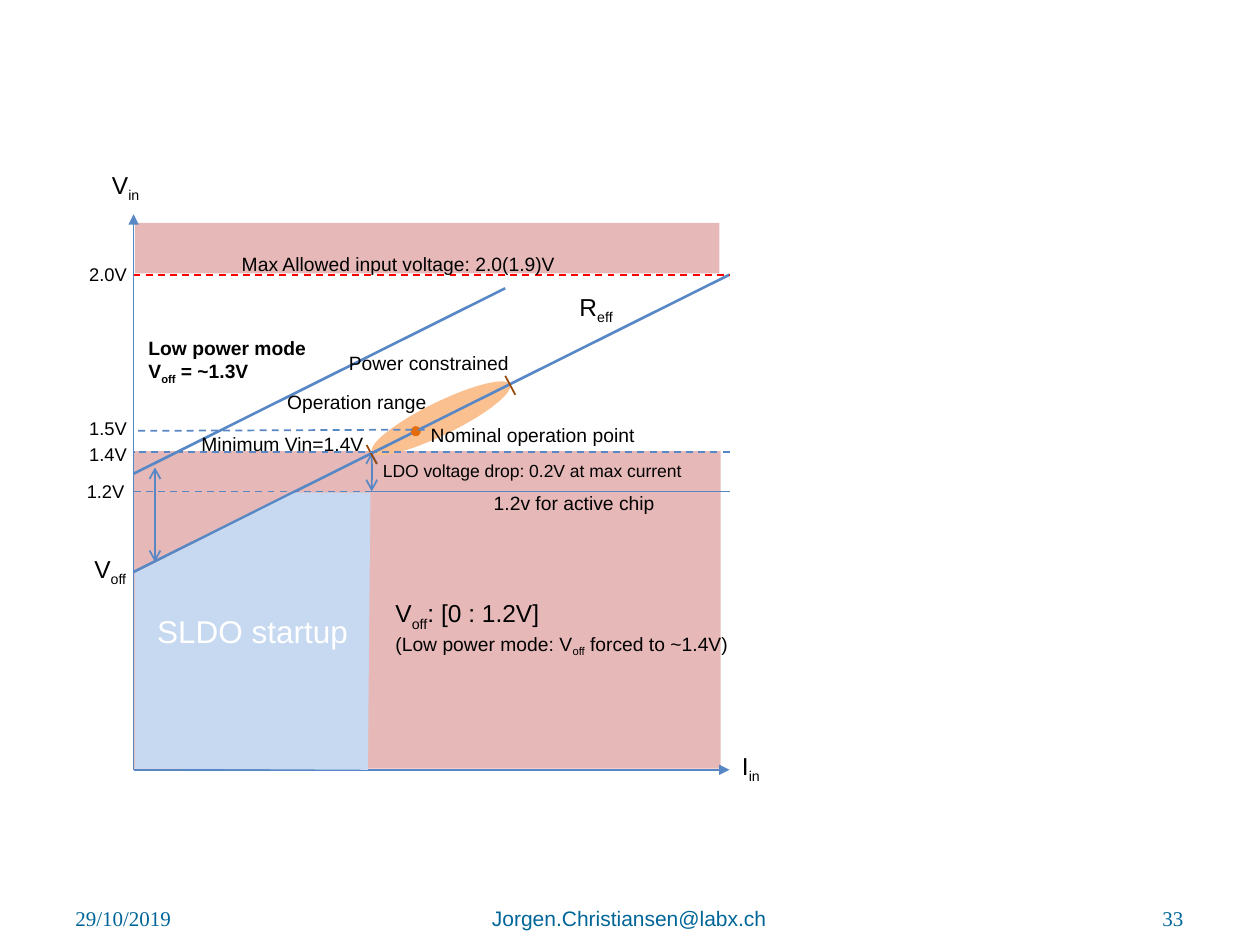
from dataclasses import dataclass

from lxml.etree import SubElement
from pptx import Presentation
from pptx.dml.color import RGBColor
from pptx.enum.dml import MSO_LINE_DASH_STYLE as Dash
from pptx.enum.shapes import MSO_CONNECTOR as Connector, MSO_SHAPE as Shape
from pptx.enum.text import MSO_ANCHOR as Anchor, MSO_AUTO_SIZE as AutoSize, PP_ALIGN as Align
from pptx.oxml.ns import qn
from pptx.util import Inches, Pt

BLACK = RGBColor(0, 0, 0)
WHITE = RGBColor(255, 255, 255)
RED = RGBColor(255, 0, 0)
BLUE = RGBColor(0x58, 0x87, 0xC6)
PALE_BLUE = RGBColor(0xC6, 0xD9, 0xF1)
PINK = RGBColor(0xE6, 0xB9, 0xB8)
PEACH = RGBColor(0xFA, 0xC0, 0x90)
ORANGE = RGBColor(0xE4, 0x6C, 0x0A)
BROWN = RGBColor(0x98, 0x48, 0x07)
TEAL = RGBColor(0, 0x66, 0x99)

CELL = Inches(10) // 100
COLUMNS, ROWS = 100, 75


@dataclass
class Box:
    left: float
    top: float
    width: float
    height: float

    def at(self, column, row):
        return round((self.left + column) * CELL), round((self.top + row) * CELL)

    def area(self, column, row, width, height):
        return *self.at(column, row), round(width * CELL), round(height * CELL)


def write(paragraph, marked, size, color=BLACK, font="Arial", bold=False):
    for index, part in enumerate(marked.split("_")):
        for count, piece in enumerate(part.split("\n")):
            if count:
                paragraph.add_line_break()
            if not piece:
                continue
            run = paragraph.add_run()
            run.text = piece
            run.font.size = Pt(size)
            run.font.name = font
            run.font.bold = bold
            run.font.color.rgb = color
            if index % 2:
                run._r.get_or_add_rPr().set("baseline", "-25000")


def label(slide, box, area, *lines, bold=False):
    frame = slide.shapes.add_textbox(*box.area(*area)).text_frame
    frame.word_wrap = False
    frame.auto_size = AutoSize.SHAPE_TO_FIT_TEXT
    for index, (marked, size) in enumerate(lines):
        paragraph = frame.add_paragraph() if index else frame.paragraphs[0]
        write(paragraph, marked, size, bold=bold)


def paint(shape, color):
    shape.shadow.inherit = False
    shape.fill.solid()
    shape.fill.fore_color.rgb = color
    shape.line.fill.background()
    return shape


def line(slide, box, start, end, color=BLUE, width=1, dashed=False, head=None, tail=None):
    connector = slide.shapes.add_connector(Connector.STRAIGHT, *box.at(*start), *box.at(*end))
    connector.line.color.rgb = color
    connector.line.width = Pt(width)
    if dashed:
        connector.line.dash_style = Dash.DASH
    outline = connector.line._get_or_add_ln()
    for tag, arrow in (("a:headEnd", head), ("a:tailEnd", tail)):
        if arrow:
            SubElement(outline, qn(tag), type=arrow)
    SubElement(connector._element.spPr, qn("a:effectLst"))


def footer(slide, box):
    parts = (
        (5, 0, 23.3, 3.4, "29/10/2019", "Times New Roman", Align.LEFT),
        (34.1, 0.8, 31.7, 2.6, "Jorgen.Christiansen@labx.ch", "Arial", Align.CENTER),
        (71.6, 0.8, 23.3, 2.6, "33", "Times New Roman", Align.RIGHT),
    )
    for *area, words, font, align in parts:
        frame = slide.shapes.add_textbox(*box.area(*area)).text_frame
        frame.word_wrap = True
        frame.vertical_anchor = Anchor.BOTTOM
        frame.paragraphs[0].alignment = align
        write(frame.paragraphs[0], words, 12, TEAL, font)


def voltage_plot(slide, box):
    right, bottom = box.width, box.height
    max_row, nominal_row, minimum_row, chip_row = 4.8, 17.2, 18.9, 22
    offset_row, low_power_row = 28.4, 20.6
    minimum, nominal, limit = 18.9, 22.4, 29.9
    slope = (offset_row - max_row) / right

    def load_row(column, start=offset_row):
        return start - slope * column

    shapes = slide.shapes
    paint(shapes.add_shape(Shape.RECTANGLE, *box.area(0.1, 0.7, 46.4, 4)), PINK)
    paint(shapes.add_shape(Shape.RECTANGLE, *box.area(0, 18.8, 46.6, 25.2)), PINK)
    operation = paint(shapes.add_shape(Shape.OVAL, *box.area(18.3, 14.9, 12.2, 2.6)), PEACH)
    operation.rotation = 333.9

    line(slide, box, (0, bottom), (right, bottom), tail="triangle")
    line(slide, box, (0, offset_row), (right, max_row), width=1.5)
    line(slide, box, (minimum, chip_row), (right, chip_row))
    line(slide, box, (minimum, minimum_row), (minimum, chip_row), head="arrow", tail="arrow")
    line(slide, box, (minimum, chip_row), (0, chip_row), dashed=True)

    outline = shapes.build_freeform(*box.at(18.8, chip_row + 0.1), scale=1.0)
    crossing = (offset_row - chip_row) / slope
    outline.add_line_segments([box.at(*corner) for corner in (
        (18.6, bottom), (0.1, bottom - 0.1), (0.1, offset_row + 0.1),
        (crossing, chip_row + 0.1))])
    startup = paint(outline.convert_to_shape(), PALE_BLUE).text_frame
    startup.vertical_anchor = Anchor.MIDDLE
    startup.paragraphs[0].alignment = Align.CENTER
    write(startup.paragraphs[0], "SLDO startup", 18, WHITE)

    dot = 0.8
    paint(shapes.add_shape(Shape.OVAL, *box.area(
        nominal - dot / 2, load_row(nominal) - dot / 2, dot, dot)), ORANGE)
    for column in (minimum, limit):
        middle = load_row(column) + 0.1
        line(slide, box, (column - 0.4, middle - 0.75), (column + 0.4, middle + 0.75), BROWN)
    line(slide, box, (0, bottom), (0, 0), tail="triangle")
    line(slide, box, (0, max_row), (right, max_row), RED, dashed=True)
    line(slide, box, (right, minimum_row), (0, minimum_row), dashed=True)
    line(slide, box, (23.1, nominal_row - 0.1), (0.1, nominal_row), dashed=True)
    line(slide, box, (0, low_power_row), (29.5, load_row(29.5, low_power_row)), width=1.5)
    line(slide, box, (1.7, 27.6), (1.7, 20.1), head="arrow", tail="arrow")


def plot_labels(slide, box):
    for words, column, row, width in (
        ("V_in_", -2.7, -4, 4.3),
        ("I_in_", box.width, 42.1, 3.6),
        ("V_off_", -4.1, 26.5, 4.7),
        ("R_eff_", 34.4, 5.7, 4.9),
    ):
        label(slide, box, (column, row, width, 3.4), (words, 14))

    for words, column, row in (
        ("2.0V", -4.5, 3.4), ("1.5V", -4.5, 15.6), ("1.4V", -4.5, 17.7), ("1.2V", -4.7, 20.6),
    ):
        label(slide, box, (column, row, 5.1, 2.8), (words, 10.5))

    for words, column, row, width in (
        ("Max Allowed input voltage: 2.0(1.9)V", 7.6, 2.5, 27.1),
        ("Power constrained", 16.1, 10.4, 14.8),
        ("Operation range", 11.2, 13.5, 13.2),
        ("Nominal operation point", 22.6, 16.1, 18.3),
        ("Minimum Vin=1.4V", 4.4, 16.8, 15.4),
        ("1.2v for active chip", 27.6, 21.5, 14.9),
    ):
        label(slide, box, (column, row, width, 2.9), (words, 11))

    label(slide, box, (18.8, 19, 25.9, 2.7), ("LDO voltage drop: 0.2V at max current", 10))
    label(slide, box, (19.8, 30, 28.7, 5.2),
          ("V_off_: [0 : 1.2V]", 14), ("(Low power mode: V_off_ forced to ~1.4V)", 11))
    label(slide, box, (0.2, 9.2, 14.6, 4.7), ("Low power mode\nV_off_ = ~1.3V", 11), bold=True)


def main():
    deck = Presentation()
    deck.slide_width = COLUMNS * CELL
    deck.slide_height = ROWS * CELL
    slide = deck.slides.add_slide(deck.slide_layouts[6])
    plot = Box(10.6, 17, 47.3, 44.1)
    footer(slide, Box(0, 71, COLUMNS, 4))
    voltage_plot(slide, plot)
    plot_labels(slide, plot)
    deck.save("out.pptx")


if __name__ == "__main__":
    main()
